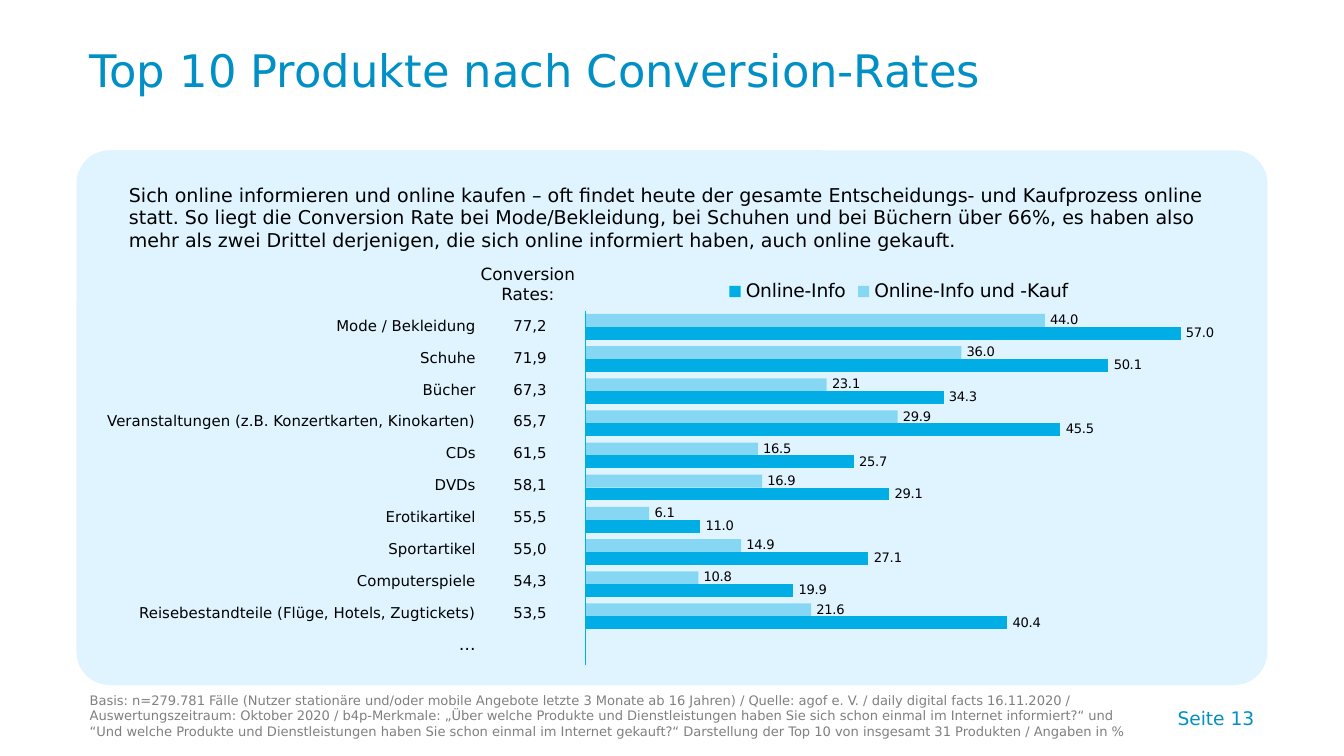
from lxml.etree import SubElement
from pptx import Presentation
from pptx.chart.data import CategoryChartData
from pptx.dml.color import RGBColor
from pptx.enum.chart import XL_CHART_TYPE, XL_LABEL_POSITION, XL_LEGEND_POSITION
from pptx.enum.chart import XL_TICK_LABEL_POSITION, XL_TICK_MARK
from pptx.enum.shapes import MSO_SHAPE
from pptx.enum.text import MSO_ANCHOR, PP_ALIGN
from pptx.oxml.ns import qn
from pptx.util import Pt

FONT = "DejaVu Sans"
COLORS = {
    "panel": "DFF4FF",
    "heading": "0090C5",
    "bar": "00ADE4",
    "text": "000000",
    "footnote": "808080",
}
NO_TABLE_STYLE = "{2D5ABB26-0587-4C30-8999-92F81FD0307C}"

# Product, conversion rate, share informed and bought, share informed
PRODUCTS = [
    ("Mode / Bekleidung", "77,2", 44, 57),
    ("Schuhe", "71,9", 36, 50.1),
    ("Bücher", "67,3", 23.1, 34.3),
    ("Veranstaltungen (z.B. Konzertkarten, Kinokarten)", "65,7", 29.9, 45.5),
    ("CDs", "61,5", 16.5, 25.7),
    ("DVDs", "58,1", 16.9, 29.1),
    ("Erotikartikel", "55,5", 6.1, 11),
    ("Sportartikel", "55,0", 14.9, 27.1),
    ("Computerspiele", "54,3", 10.8, 19.9),
    ("Reisebestandteile (Flüge, Hotels, Zugtickets)", "53,5", 21.6, 40.4),
    ("…", "", None, None),
]
INTRODUCTION = (
    "Sich online informieren und online kaufen – oft findet heute der gesamte "
    "Entscheidungs- und Kaufprozess online statt. So liegt die Conversion Rate bei "
    "Mode/Bekleidung, bei Schuhen und bei Büchern über 66%, es haben also mehr als zwei "
    "Drittel derjenigen, die sich online informiert haben, auch online gekauft."
)
FOOTNOTE = (
    "Basis: n=279.781 Fälle (Nutzer stationäre und/oder mobile Angebote letzte 3 Monate "
    "ab 16 Jahren) / Quelle: agof e. V. / daily digital facts 16.11.2020 / "
    "Auswertungszeitraum: Oktober 2020 / b4p-Merkmale: „Über welche Produkte und "
    "Dienstleistungen haben Sie sich schon einmal im Internet informiert?“ und \n"
    "“Und welche Produkte und Dienstleistungen haben Sie schon einmal im Internet "
    "gekauft?“ Darstellung der Top 10 von insgesamt 31 Produkten / Angaben in %"
)


def color(name):
    return RGBColor.from_string(COLORS[name])


def set_font(font, size, color_name="text"):
    font.name = FONT
    font.size = Pt(size)
    font.color.rgb = color(color_name)


def write_paragraph(paragraph, text, size, color_name="text", align=PP_ALIGN.LEFT):
    """Write text with line breaks; breaks and empty paragraphs keep the font size."""
    paragraph.text = text
    paragraph.alignment = align
    for run in paragraph.runs:
        set_font(run.font, size, color_name)
    size_value = str(round(size * 100))
    for line_break in paragraph._p.findall(qn("a:br")):
        SubElement(line_break, qn("a:rPr"), sz=size_value)
    if not text:
        SubElement(paragraph._p, qn("a:endParaRPr"), sz=size_value)


def add_text(slide, box, paragraphs, anchor=MSO_ANCHOR.TOP, wrap=True,
             line_spacing=None, **text_format):
    frame = slide.shapes.add_textbox(*map(Pt, box)).text_frame
    frame.word_wrap = wrap
    frame.vertical_anchor = anchor
    for index, text in enumerate(paragraphs):
        paragraph = frame.add_paragraph() if index else frame.paragraphs[0]
        paragraph.line_spacing = line_spacing
        write_paragraph(paragraph, text, **text_format)


def add_panel(slide):
    panel = slide.shapes.add_shape(
        MSO_SHAPE.ROUNDED_RECTANGLE, Pt(41), Pt(80.5), Pt(638), Pt(286.5))
    panel.adjustments[0] = 0.062
    panel.shadow.inherit = False
    panel.fill.solid()
    panel.fill.fore_color.rgb = color("panel")
    panel.line.fill.background()


def add_rate_table(slide):
    frame = slide.shapes.add_table(
        len(PRODUCTS), 2, Pt(49), Pt(165.8), Pt(263.5), Pt(188))
    table = frame.table
    table.first_row = table.horz_banding = False
    table._tbl.tblPr.find(qn("a:tableStyleId")).text = NO_TABLE_STYLE
    for column, width in zip(table.columns, (206.5, 57)):
        column.width = Pt(width)
    for row, (product, rate, *_) in zip(table.rows, PRODUCTS):
        row.height = Pt(17.1)
        for cell, text, align in zip(
                row.cells, (product, rate), (PP_ALIGN.RIGHT, PP_ALIGN.CENTER)):
            cell.fill.background()
            cell.vertical_anchor = MSO_ANCHOR.MIDDLE
            cell.margin_left = cell.margin_right = cell.margin_top = Pt(0.7)
            cell.margin_bottom = Pt(0)
            size = 9 if text == "…" else 8
            write_paragraph(cell.text_frame.paragraphs[0], text, size, align=align)


def set_plot_layout(chart, **position):
    """Place the inner plot area by fractions of the chart."""
    plot_area = chart._chartSpace.chart.plotArea
    for old_layout in plot_area.findall(qn("c:layout")):
        plot_area.remove(old_layout)
    layout = SubElement(plot_area, qn("c:layout"))
    plot_area.insert(0, layout)
    manual = SubElement(layout, qn("c:manualLayout"))
    values = dict(layoutTarget="inner", xMode="edge", yMode="edge", **position)
    for tag, value in values.items():
        SubElement(manual, qn(f"c:{tag}"), val=str(value))


def style_series(series, opacity):
    fill = series.format.fill
    fill.solid()
    fill.fore_color.rgb = color("bar")
    if opacity < 100:
        rgb = series._element.find(".//" + qn("a:srgbClr"))
        SubElement(rgb, qn("a:alpha"), val=str(opacity * 1000))
    labels = series.data_labels
    labels.show_value = True
    labels.number_format = "0.0"
    labels.number_format_is_linked = False
    labels.position = XL_LABEL_POSITION.OUTSIDE_END
    set_font(labels.font, 7)


def add_bar_chart(slide):
    data = CategoryChartData(number_format="0.0")
    data.categories = [str(number + 1) for number in range(len(PRODUCTS))]
    data.add_series("Online-Info und -Kauf", [product[2] for product in PRODUCTS])
    data.add_series("Online-Info", [product[3] for product in PRODUCTS])
    chart = slide.shapes.add_chart(
        XL_CHART_TYPE.BAR_CLUSTERED, Pt(303), Pt(142.5), Pt(357), Pt(218), data).chart
    set_font(chart.font, 9)
    chart.has_title = False
    chart.has_legend = True
    chart.legend.position = XL_LEGEND_POSITION.TOP
    chart.legend.include_in_layout = False
    set_font(chart.legend.font, 10)
    plot = chart.plots[0]
    plot.gap_width = 50
    plot.vary_by_categories = False
    for series, opacity in zip(plot.series, (40, 100)):
        style_series(series, opacity)
    category_axis = chart.category_axis
    category_axis.reverse_order = True
    category_axis.tick_label_position = XL_TICK_LABEL_POSITION.NONE
    category_axis.major_tick_mark = XL_TICK_MARK.NONE
    category_axis.format.line.color.rgb = color("bar")
    category_axis.format.line.width = Pt(0.75)
    value_axis = chart.value_axis
    value_axis.visible = False
    value_axis.has_major_gridlines = False
    value_axis.minimum_scale = 0
    value_axis.maximum_scale = 60
    set_plot_layout(chart, x=0.03, y=0.11, w=0.94, h=0.87)


def main():
    presentation = Presentation()
    presentation.slide_width, presentation.slide_height = Pt(720), Pt(405)
    slide = presentation.slides.add_slide(presentation.slide_layouts[6])
    add_panel(slide)
    add_text(slide, (471, 367, 208, 27.5), ["Seite 13"], anchor=MSO_ANCHOR.BOTTOM,
             size=10, color_name="heading", align=PP_ALIGN.RIGHT)
    add_text(slide, (41, 20, 528, 40), ["Top 10 Produkte nach Conversion-Rates"],
             anchor=MSO_ANCHOR.MIDDLE, line_spacing=0.8, size=24, color_name="heading")
    add_rate_table(slide)
    add_bar_chart(slide)
    add_text(slide, (250, 137.5, 65.5, 29), ["Conversion", "Rates:"], wrap=False,
             size=9, align=PP_ALIGN.CENTER)
    add_text(slide, (41, 371.5, 592.5, 28), [FOOTNOTE], anchor=MSO_ANCHOR.BOTTOM,
             size=7, color_name="footnote")
    add_text(slide, (62, 94.5, 598, 46), [INTRODUCTION], size=10.2)
    presentation.save("out.pptx")


if __name__ == "__main__":
    main()
